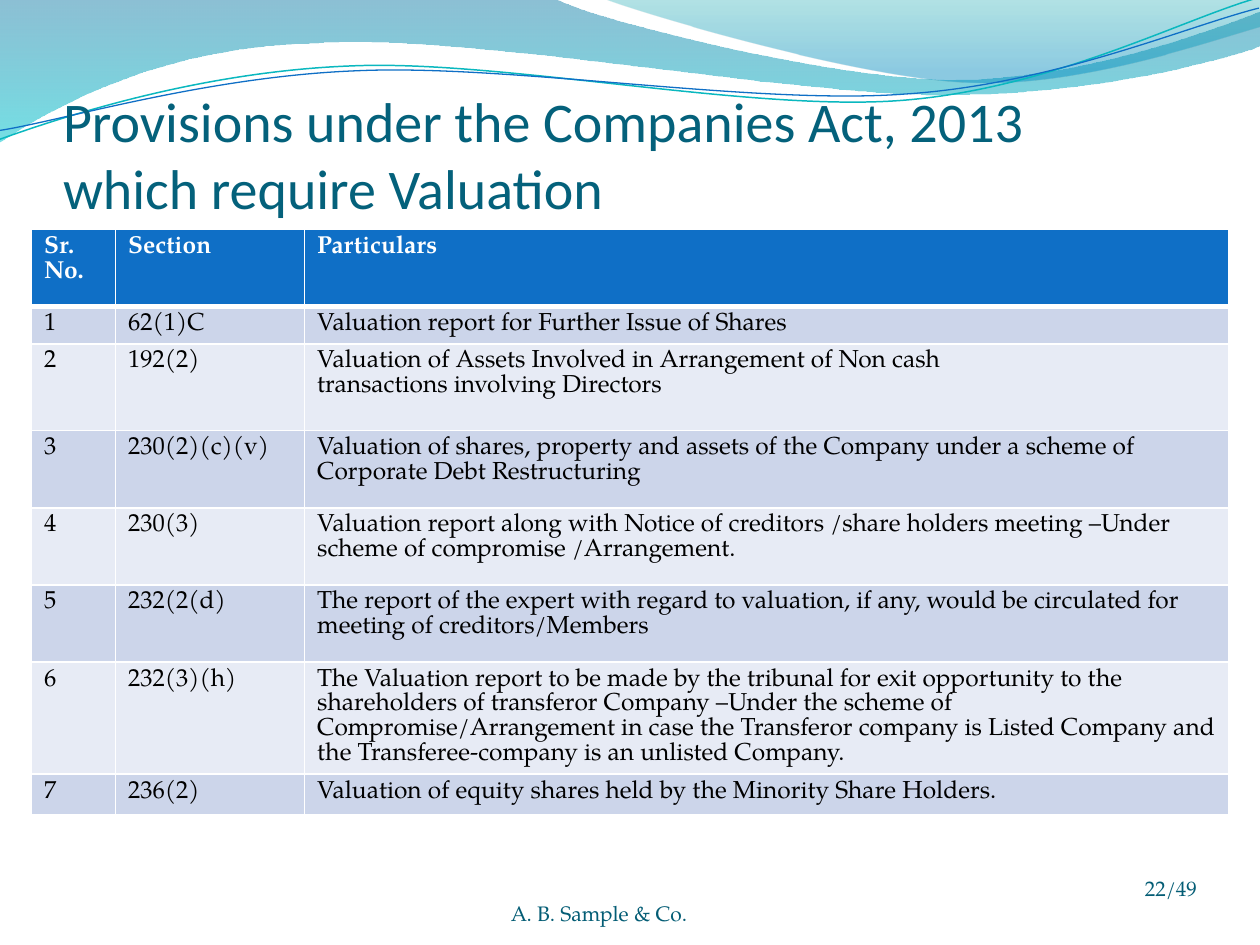
from collections import namedtuple

from lxml.etree import SubElement
from pptx import Presentation
from pptx.dml.color import RGBColor
from pptx.enum.text import MSO_ANCHOR, PP_ALIGN
from pptx.oxml import parse_xml
from pptx.oxml.ns import nsdecls, qn
from pptx.util import Emu, Inches, Pt

Box = namedtuple("Box", "left top width height")

SLIDE_WIDTH, SLIDE_HEIGHT = Inches(10), Inches(7.5)
GRID_COLUMNS, GRID_ROWS = 40, 30
COLUMN, ROW = SLIDE_WIDTH // GRID_COLUMNS, SLIDE_HEIGHT // GRID_ROWS

HEADING_FONT, BODY_FONT = "Calibri", "TeX Gyre Pagella"
TITLE_COLOR = RGBColor(0x04, 0x61, 0x7B)
FOOTER_COLOR = RGBColor(0x04, 0x5D, 0x75)
BLUE = RGBColor(0x0F, 0x6F, 0xC6)
TEAL = RGBColor(0x0A, 0xB8, 0xBF)
DEEP_BLUE = RGBColor(0x00, 0x74, 0xA1)
CYAN = RGBColor(0x00, 0xC6, 0xCF)
SEA_GREEN = RGBColor(0x00, 0xA1, 0xA9)
SKY_BLUE = RGBColor(0x00, 0x8B, 0xBF)
DARK_BAND = RGBColor(0xCC, 0xD5, 0xEA)
LIGHT_BAND = RGBColor(0xE7, 0xEB, 0xF5)
WHITE = RGBColor(0xFF, 0xFF, 0xFF)
BLACK = RGBColor(0, 0, 0)

WAVE_COLUMNS = 10
CURVE_TILT = -2.7
BROAD_WAVE = [
    (0, 0), (4.4, -0.01), (4.76, 0.17, 6.64, 0.63, 7.58, 0.63),
    (8.53, 0.63, 9.58, 0.26, 10, 0.09), (10.01, 0.36),
    (9.83, 0.44, 8.7, 0.76, 7.46, 0.75), (6.22, 0.75, 3.82, 0.28, 2.57, 0.34),
    (1.29, 0.36, 0.46, 0.83, -0.01, 1.13), (0, 0),
]
CORNER_WAVE = [
    (4.79, -0.01), (5.09, 0.11, 6.82, 0.62, 7.69, 0.65),
    (8.56, 0.69, 9.61, 0.32, 10, 0.21), (10, 0), (4.79, -0.01),
]
TEAL_CURVE = [
    (-0.02, 0.87), (0.47, 0.72, 1.58, 0.41, 2.78, 0.42),
    (3.96, 0.42, 5.91, 0.93, 7.12, 0.9), (8.32, 0.87, 9.4, 0.36, 10, 0.22),
]
BLUE_CURVE = [
    (-0.02, 0.8), (0.46, 0.75, 1.64, 0.45, 2.83, 0.46),
    (4.03, 0.46, 5.96, 0.88, 7.16, 0.85), (8.35, 0.83, 9.42, 0.42, 10.01, 0.3),
]

TABLE_COLUMNS = (2.67, 6, 29.33)
PROVISIONS = [
    (2.45, "Sr. No.", "Section", "Particulars"),
    (1.18, "1", "62(1)C", "Valuation report for Further Issue of Shares"),
    (2.76, "2", "192(2)", "Valuation of Assets Involved in Arrangement of Non cash\n"
     "transactions involving Directors"),
    (2.45, "3", "230(2)(c)(v)", "Valuation of shares, property and assets of the Company "
     "under a scheme of Corporate Debt Restructuring"),
    (2.45, "4", "230(3)", "Valuation report along with Notice of creditors /share holders "
     "meeting –Under scheme of compromise /Arrangement."),
    (2.45, "5", "232(2(d)", "The report of the expert with regard to valuation, if any, "
     "would be circulated for meeting of creditors/Members"),
    (3.56, "6", "232(3)(h)", "The Valuation report to be made by the tribunal for exit "
     "opportunity to the shareholders of transferor Company –Under the scheme of "
     "Compromise/Arrangement in case the Transferor company is Listed Company and "
     "the Transferee-company is an unlisted Company."),
    (1.28, "7", "236(2)", "Valuation of equity shares held by the Minority Share Holders."),
]


def grid_box(left, top, width, height):
    return Box(*(Emu(int(length)) for length in
                 (left * COLUMN, top * ROW, width * COLUMN, height * ROW)))


def add_span(para, text, font, size, color, bold=False):
    span = para.add_run()
    span.text = text
    span.font.name = font
    span.font.size = Pt(size)
    span.font.color.rgb = color
    span.font.bold = bold


def bend_segments(shape, segments):
    lines = iter(list(shape.element.iter(qn("a:lnTo"))))
    for segment in segments[1:]:
        line = next(lines)
        if len(segment) == 2:
            continue
        line.addprevious(parse_xml(f'<a:cubicBezTo {nsdecls("a")}/>'))
        curve = line.getprevious()
        for control in (line, next(lines), next(lines)):
            curve.append(control[0])
            control.getparent().remove(control)


def add_outline(page, box, segments, close):
    points = [(box.left + x * box.width / WAVE_COLUMNS, box.top + y * box.height)
              for segment in segments for x, y in zip(segment[::2], segment[1::2])]
    builder = page.shapes.build_freeform(*points[0], scale=1.0)
    builder.add_line_segments(points[1:], close=close)
    shape = builder.convert_to_shape()
    bend_segments(shape, segments)
    shape.shadow.inherit = False
    return shape


def add_wave(page, box, segments, stops):
    shape = add_outline(page, box, segments, True)
    shape.line.fill.background()
    shape.fill.gradient()
    shape.fill.gradient_angle = 270
    for stop, (position, color, opacity) in zip(shape.fill.gradient_stops, stops):
        stop.position = position
        stop.color.rgb = color
    colors = shape.element.spPr.iter(qn("a:srgbClr"))
    for element, (position, color, opacity) in zip(list(colors), stops):
        SubElement(element, qn("a:alpha")).set("val", str(opacity * 1000))


def add_curve(page, box, segments, color, width):
    shape = add_outline(page, box, segments, False)
    shape.rotation = CURVE_TILT
    shape.fill.background()
    shape.line.color.rgb = color
    shape.line.width = Pt(width)


def add_header(page, box):
    add_wave(page, box, BROAD_WAVE, [(0, DEEP_BLUE, 45), (1, CYAN, 55)])
    add_wave(page, box, CORNER_WAVE, [(0, SEA_GREEN, 30), (0.8, SKY_BLUE, 45)])
    add_curve(page, box, TEAL_CURVE, TEAL, 0.85)
    add_curve(page, box, BLUE_CURVE, BLUE, 0.75)


def add_bottom_text(page, box, bottom_inset=0):
    frame = page.shapes.add_textbox(*box).text_frame
    frame.word_wrap = True
    frame.vertical_anchor = MSO_ANCHOR.BOTTOM
    frame.margin_left = frame.margin_right = frame.margin_top = 0
    frame.margin_bottom = Inches(bottom_inset)
    return frame.paragraphs[0]


def add_title(page, box):
    para = add_bottom_text(page, box)
    add_span(para, "Provisions under the Companies Act, 2013", HEADING_FONT, 32, TITLE_COLOR)
    para.add_line_break()
    add_span(para, "which require Valuation", HEADING_FONT, 32, TITLE_COLOR)


def add_footer(page, box, text, alignment, bottom_inset=0):
    para = add_bottom_text(page, box, bottom_inset)
    para.alignment = alignment
    add_span(para, text, BODY_FONT, 12, FOOTER_COLOR)


def add_borders(cell, bottom_width):
    properties = cell._tc.get_or_add_tcPr()
    for index, (side, width) in enumerate(zip("LRTB", (1, 1, 1, bottom_width))):
        properties.insert(index, parse_xml(
            f'<a:ln{side} {nsdecls("a")} w="{Pt(width)}"><a:solidFill>'
            f'<a:srgbClr val="{WHITE}"/></a:solidFill></a:ln{side}>'))


def add_provisions(page, box):
    table = page.shapes.add_table(len(PROVISIONS), len(TABLE_COLUMNS), *box).table
    for column, width in zip(table.columns, TABLE_COLUMNS):
        column.width = Emu(int(box.width * width / sum(TABLE_COLUMNS)))
    for row_index, (height, *texts) in enumerate(PROVISIONS):
        header = row_index == 0
        fill = BLUE if header else DARK_BAND if row_index % 2 else LIGHT_BAND
        table.rows[row_index].height = Emu(int(height * ROW))
        for cell, text in zip(table.rows[row_index].cells, texts):
            cell.fill.solid()
            cell.fill.fore_color.rgb = fill
            cell.margin_right = Inches(0.08)
            add_borders(cell, 3 if header else 1)
            for line_index, line in enumerate(text.split("\n")):
                frame = cell.text_frame
                para = frame.add_paragraph() if line_index else frame.paragraphs[0]
                para.line_spacing = Pt(14.1)
                add_span(para, line, BODY_FONT, 14, WHITE if header else BLACK, header)


def main():
    deck = Presentation()
    deck.slide_width, deck.slide_height = SLIDE_WIDTH, SLIDE_HEIGHT
    page = deck.slides.add_slide(deck.slide_layouts[6])
    add_header(page, grid_box(0, 0, 40, 4))
    add_title(page, grid_box(2, 2, 36.32, 5))
    add_footer(page, grid_box(11.68, 27.8, 14.68, 1.6), "A. B. Sample & Co.", PP_ALIGN.CENTER)
    add_provisions(page, grid_box(1, 7.28, 38, sum(row[0] for row in PROVISIONS)))
    add_footer(page, grid_box(34.68, 27.8, 3.32, 1.6), "22/49", PP_ALIGN.RIGHT, 0.2)
    deck.save("out.pptx")


if __name__ == "__main__":
    main()
